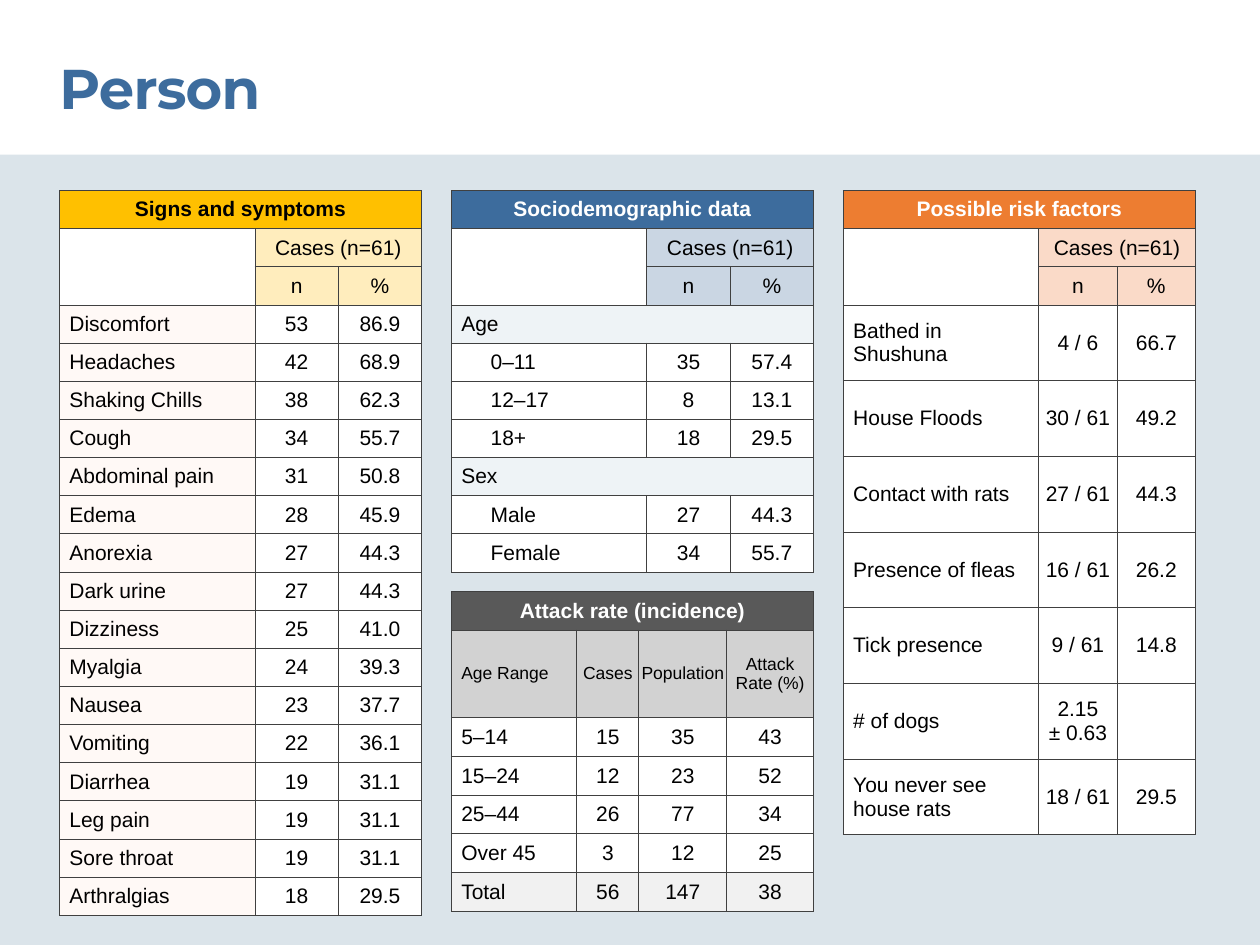
from dataclasses import dataclass

from lxml.etree import SubElement
from pptx import Presentation
from pptx.dml.color import RGBColor
from pptx.enum.shapes import MSO_SHAPE as Shape
from pptx.enum.text import MSO_ANCHOR as Anchor, PP_ALIGN as Align
from pptx.oxml.ns import qn
from pptx.util import Cm, Pt

# --- Content: a one-item row is a group heading across the table ---
TITLE = "Person"
SYMPTOMS = [
    ("Discomfort", "53", "86.9"), ("Headaches", "42", "68.9"),
    ("Shaking Chills", "38", "62.3"), ("Cough", "34", "55.7"),
    ("Abdominal pain", "31", "50.8"), ("Edema", "28", "45.9"),
    ("Anorexia", "27", "44.3"), ("Dark urine", "27", "44.3"),
    ("Dizziness", "25", "41.0"), ("Myalgia", "24", "39.3"),
    ("Nausea", "23", "37.7"), ("Vomiting", "22", "36.1"),
    ("Diarrhea", "19", "31.1"), ("Leg pain", "19", "31.1"),
    ("Sore throat", "19", "31.1"), ("Arthralgias", "18", "29.5"),
]
SOCIODEMOGRAPHIC = [
    ("Age",),
    ("0–11", "35", "57.4"), ("12–17", "8", "13.1"), ("18+", "18", "29.5"),
    ("Sex",),
    ("Male", "27", "44.3"), ("Female", "34", "55.7"),
]
RISK_FACTORS = [
    ("Bathed in Shushuna", "4 / 6", "66.7"), ("House Floods", "30 / 61", "49.2"),
    ("Contact with rats", "27 / 61", "44.3"), ("Presence of fleas", "16 / 61", "26.2"),
    ("Tick presence", "9 / 61", "14.8"), ("# of dogs", "2.15\n± 0.63", ""),
    ("You never see house rats", "18 / 61", "29.5"),
]
ATTACK_HEADS = ("Age Range", "Cases", "Population", "Attack Rate (%)")
ATTACK_RATES = [
    ("5–14", "15", "35", "43"), ("15–24", "12", "23", "52"),
    ("25–44", "26", "77", "34"), ("Over 45", "3", "12", "25"),
    ("Total", "56", "147", "38"),
]


@dataclass(frozen=True)
class Theme:
    font: str = "Arial"
    title_font: str = "Montserrat"
    title_size: int = 32
    size: int = 12
    small: int = 10
    black: str = "000000"
    white: str = "FFFFFF"
    panel: str = "DBE4EA"
    border: str = "404040"
    blue: str = "3D6C9D"
    blue_tint: str = "CAD6E3"
    group: str = "EEF3F6"
    yellow: str = "FFC000"
    yellow_tint: str = "FFEDBD"
    label: str = "FFF9F6"
    orange: str = "ED7D31"
    orange_tint: str = "FADAC8"
    gray: str = "595959"
    gray_tint: str = "D2D2D2"
    total: str = "F1F1F1"


T = Theme()
rgb = RGBColor.from_string

# --- Layout in centimetres ---
LEFT, TOP, GAP = 1.2, 3.84, 0.6
ROW = 14.5 / 19
COLS = (3.94, 1.68, 1.68)
RISK_COLS = (3.94, 1.58, 1.58)
ATTACK_COLS = (2.53, 1.25, 1.77, 1.75)
PAD, PAD_Y, INDENT = 0.2, 0.13, 0.59
MIDDLE = LEFT + sum(COLS) + GAP
RIGHT = MIDDLE + sum(COLS) + GAP

prs = Presentation()
prs.slide_width, prs.slide_height = Cm(25.4), Cm(19.05)
slide = prs.slides.add_slide(prs.slide_layouts[6])


def set_cell(cell, text="", fill=T.white, color=T.black, bold=False,
             size=T.size, align=Align.CENTER, left=PAD, right=PAD):
    cell.text = text
    cell.vertical_anchor = Anchor.MIDDLE
    cell.margin_left, cell.margin_right = Cm(left), Cm(right)
    cell.margin_top = cell.margin_bottom = Cm(PAD_Y)
    for p in cell.text_frame.paragraphs:
        p.alignment = align
        f = p.font
        f.name, f.size, f.bold = T.font, Pt(size), bold
        f.color.rgb = rgb(color)
    tc_pr = cell._tc.get_or_add_tcPr()
    for side in ("a:lnL", "a:lnR", "a:lnT", "a:lnB"):
        ln = SubElement(tc_pr, qn(side), w=str(Pt(0.5)))
        SubElement(SubElement(ln, qn("a:solidFill")), qn("a:srgbClr"), val=T.border)
    cell.fill.solid()
    cell.fill.fore_color.rgb = rgb(fill)


def add_table(x, y, cols, heights, heading, fill, color=T.white):
    """Add a table whose first row is a heading across all columns."""
    tbl = slide.shapes.add_table(len(heights), len(cols), Cm(x), Cm(y),
                                 Cm(sum(cols)), Cm(sum(heights))).table
    tbl.first_row = tbl.horz_banding = False
    for col, width in zip(tbl.columns, cols):
        col.width = Cm(width)
    for row, height in zip(tbl.rows, heights):
        row.height = Cm(height)
    span_row(tbl, 0, heading, fill=fill, color=color, bold=True)
    return tbl


def span_row(tbl, r, text, start=0, **style):
    last = len(tbl.columns) - 1
    for c in range(start, last + 1):
        set_cell(tbl.cell(r, c), text if c == start else "", **style)
    tbl.cell(r, start).merge(tbl.cell(r, last))


def add_case_table(x, cols, heading, rows, fill, tint, color=T.white,
                   label_fill=T.white, row_height=ROW, pad=PAD):
    """Add a table of case counts (n) and shares (%) per label."""
    heights = [ROW] * 3 + [row_height] * len(rows)
    tbl = add_table(x, TOP, cols, heights, heading, fill, color)
    for r in (1, 2):
        set_cell(tbl.cell(r, 0))
    tbl.cell(1, 0).merge(tbl.cell(2, 0))
    span_row(tbl, 1, "Cases (n=61)", start=1, fill=tint)
    for c, head in enumerate(("n", "%"), 1):
        set_cell(tbl.cell(2, c), head, tint, left=pad, right=pad)

    indent = INDENT if any(len(row) == 1 for row in rows) else 0
    for r, (label, *values) in enumerate(rows, 3):
        if not values:
            span_row(tbl, r, label, fill=T.group, align=Align.LEFT)
            continue
        set_cell(tbl.cell(r, 0), label, label_fill, align=Align.LEFT, left=PAD + indent)
        for c, value in enumerate(values, 1):
            set_cell(tbl.cell(r, c), value, left=pad, right=pad)


# --- Background panel ---
sp = slide.shapes.add_shape(Shape.RECTANGLE, Cm(-0.15), Cm(3.12), Cm(25.55), Cm(15.93))
sp.shadow.inherit = False
sp.fill.solid()
sp.fill.fore_color.rgb = rgb(T.panel)
sp.line.fill.background()

# --- Title ---
tf = slide.shapes.add_textbox(Cm(LEFT), Cm(1.07), Cm(22.02), Cm(1.37)).text_frame
tf.word_wrap = True
tf.margin_left = tf.margin_right = tf.margin_top = tf.margin_bottom = 0
r = tf.paragraphs[0].add_run()
r.text = TITLE
r.font.name, r.font.size, r.font.bold = T.title_font, Pt(T.title_size), True
r.font.color.rgb = rgb(T.blue)
r.font._element.set("spc", "-50")

# --- Case tables ---
add_case_table(LEFT, COLS, "Signs and symptoms", SYMPTOMS, T.yellow, T.yellow_tint,
               color=T.black, label_fill=T.label)
add_case_table(MIDDLE, COLS, "Sociodemographic data", SOCIODEMOGRAPHIC, T.blue, T.blue_tint)
add_case_table(RIGHT, RISK_COLS, "Possible risk factors", RISK_FACTORS, T.orange,
               T.orange_tint, row_height=2 * ROW, pad=0)

# --- Attack rate table ---
attack = add_table(MIDDLE, 11.93, ATTACK_COLS, [ROW, 1.77] + [0.78] * len(ATTACK_RATES),
                   "Attack rate (incidence)", T.gray)
for i, row in enumerate([ATTACK_HEADS, *ATTACK_RATES], 1):
    is_head = i == 1
    fill = T.gray_tint if is_head else T.total if row[0] == "Total" else T.white
    for c, text in enumerate(row):
        set_cell(attack.cell(i, c), text, fill,
                 size=T.small if is_head else T.size,
                 align=Align.CENTER if c else Align.LEFT,
                 left=0 if is_head and c else PAD,
                 right=0 if is_head or c == 0 else PAD)

prs.save("out.pptx")
